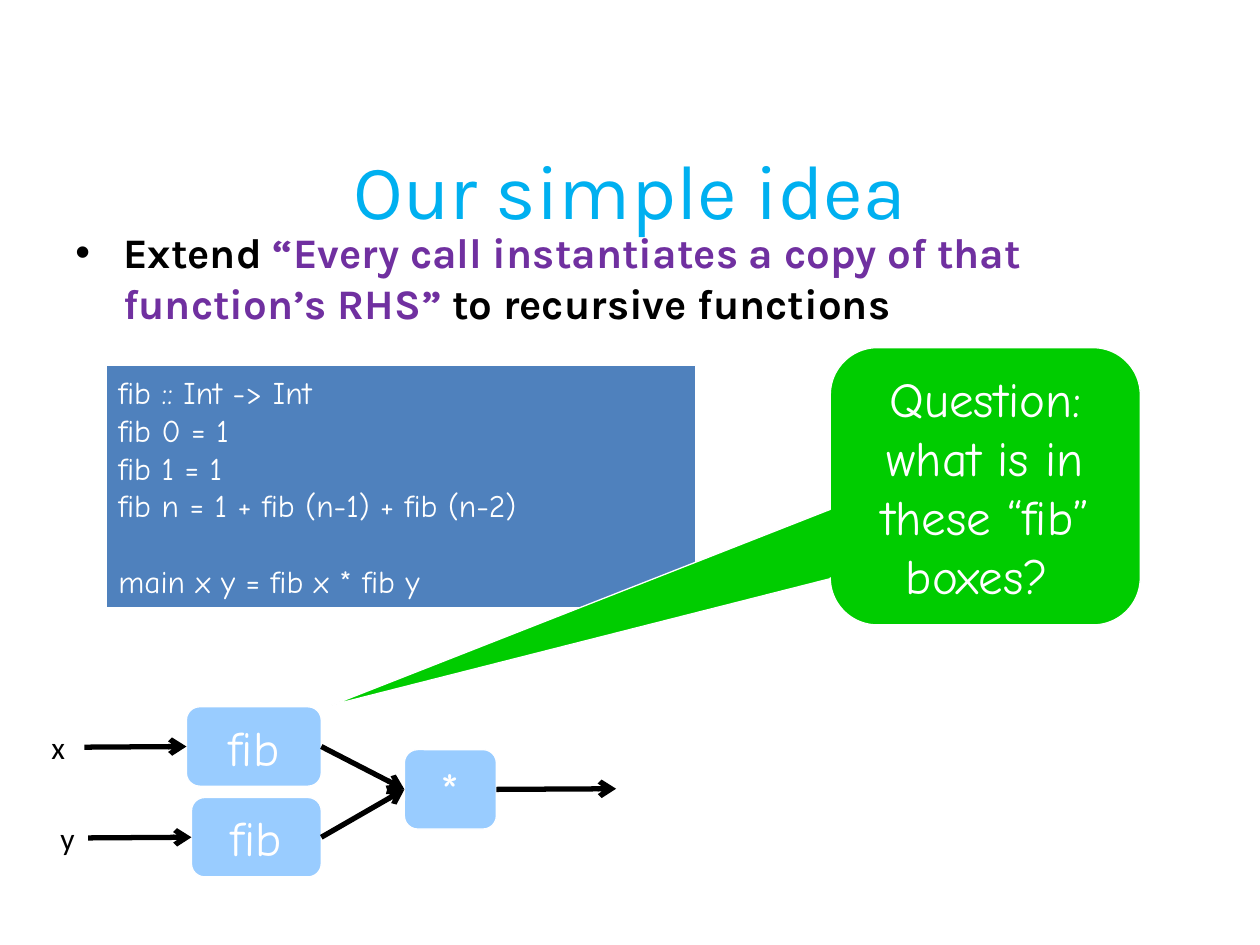
from lxml.etree import SubElement
from pptx import Presentation
from pptx.dml.color import RGBColor
from pptx.enum.shapes import MSO_CONNECTOR as Line, MSO_SHAPE as Shape
from pptx.enum.text import MSO_ANCHOR as Anchor, MSO_AUTO_SIZE as Fit, PP_ALIGN as Align
from pptx.oxml.ns import qn
from pptx.util import Inches, Pt

COLORS = {
    "title": "00B0F0", "ink": "000000", "quote": "7030A0", "paper": "FFFFFF",
    "code": "4F81BD", "node": "99CCFF", "callout": "00CC00",
}
HEADING, HAND, LABEL = "Karla", "Comic Neue", "Calibri"
COLUMNS, ROWS = 100, 75
LEFT_SITE, RIGHT_SITE = 1, 3


class Deck:
    def __init__(self):
        self.prs = Presentation()
        self.prs.slide_width, self.prs.slide_height = Inches(10), Inches(7.5)
        self.slide = self.prs.slides.add_slide(self.prs.slide_layouts[5])
        self.shapes = self.slide.shapes

    def x(self, columns):
        return round(self.prs.slide_width * columns / COLUMNS)

    def y(self, rows):
        return round(self.prs.slide_height * rows / ROWS)

    def area(self, left, top, width, height):
        return self.x(left), self.y(top), self.x(width), self.y(height)

    def color(self, name):
        return RGBColor.from_string(COLORS[name])

    def style(self, paragraph, size, font, color, align=Align.LEFT):
        paragraph.alignment = align
        paragraph.font.size, paragraph.font.name = Pt(size), font
        paragraph.font.color.rgb = self.color(color)

    def title(self, text, *area):
        heading = self.shapes.title
        heading.left, heading.top, heading.width, heading.height = self.area(*area)
        frame = heading.text_frame
        frame.text, frame.vertical_anchor = text, Anchor.MIDDLE
        frame.auto_size = Fit.NONE
        self.style(frame.paragraphs[0], 44, HEADING, "title", Align.CENTER)

    def text_box(self, *area, wrap=True):
        frame = self.shapes.add_textbox(*self.area(*area)).text_frame
        frame.word_wrap = wrap
        return frame.paragraphs[0]

    def bullet(self, parts, *area):
        point = self.text_box(*area)
        props = point._p.get_or_add_pPr()
        props.set("marL", str(Inches(0.38)))
        props.set("indent", str(-Inches(0.38)))
        SubElement(props, qn("a:buFont")).set("typeface", "Arial")
        SubElement(props, qn("a:buChar")).set("char", "•")
        self.style(point, 24, HEADING, "ink")
        point.font.bold = True
        for text, color in parts:
            run = point.add_run()
            run.text = text
            run.font.color.rgb = self.color(color)

    def label(self, text, *area):
        name = self.text_box(*area, wrap=False)
        name.text = text
        self.style(name, 18, LABEL, "ink")

    def block(self, kind, text, fill, *area, size=28, align=Align.CENTER):
        block = self.shapes.add_shape(kind, *self.area(*area))
        block.shadow.inherit = False
        block.fill.solid()
        block.fill.fore_color.rgb = self.color(fill)
        block.line.color.rgb = self.color("paper")
        block.line.width = Pt(0.75)
        frame = block.text_frame
        frame.text, frame.word_wrap = text, True
        frame.vertical_anchor = Anchor.MIDDLE
        for paragraph in frame.paragraphs:
            self.style(paragraph, size, HAND, "paper", align)
        return block

    def node(self, text, *area):
        return self.block(Shape.ROUNDED_RECTANGLE, text, "node", *area)

    def arrow(self, source=None, target=None, start=(0, 0), end=(0, 0)):
        wire = self.shapes.add_connector(
            Line.STRAIGHT, self.x(start[0]), self.y(start[1]), self.x(end[0]), self.y(end[1]))
        if source is not None:
            wire.begin_connect(source, RIGHT_SITE)
        if target is not None:
            wire.end_connect(target, LEFT_SITE)
        wire.line.color.rgb = self.color("ink")
        wire.line.width = Pt(3)
        SubElement(wire.line._get_or_add_ln(), qn("a:tailEnd")).set("type", "arrow")
        SubElement(wire._element.spPr, qn("a:effectLst"))


def main():
    deck = Deck()
    deck.title("Our simple idea", 5, 8.7, 90, 12.5)
    deck.bullet([
        ("Extend ", "ink"),
        ("“Every call instantiates a copy of that function’s RHS” ", "quote"),
        ("to recursive functions", "ink"),
    ], 5, 17.5, 90, 53.3)

    program = "\n".join([
        "fib :: Int -> Int",
        "fib 0 = 1",
        "fib 1 = 1",
        "fib n = 1 + fib (n-1) + fib (n-2)",
        "main x y = fib x * fib y",
    ])
    code = deck.block(Shape.RECTANGLE, program, "code", 8.4, 29, 46.8, 19.2,
                      size=18, align=Align.LEFT)
    code.text_frame.paragraphs[-1].space_before = Pt(21.6)

    fib_x = deck.node("fib", 14.8, 56.1, 10.7, 6.3)
    fib_y = deck.node("fib", 15.2, 63.3, 10.3, 6.3)
    product = deck.node("*", 32.1, 59.5, 7.3, 6.3)

    for fib in (fib_x, fib_y):
        deck.arrow(fib, product)
    deck.arrow(target=fib_x, start=(6.7, 59.3))
    deck.label("x", 3.1, 57.3, 3.5, 4)
    deck.arrow(target=fib_y, start=(7, 66.5))
    deck.label("y", 3.8, 64.5, 3.2, 4)
    deck.arrow(source=product, end=(48.9, 62.6))

    question = deck.block(Shape.ROUNDED_RECTANGULAR_CALLOUT,
                          "Question: what is in these “fib” boxes? ",
                          "callout", 65.9, 27.6, 24.6, 22)
    for index, value in enumerate((-2.11, 0.79, 0.17)):
        question.adjustments[index] = value

    deck.prs.save("out.pptx")


if __name__ == "__main__":
    main()
